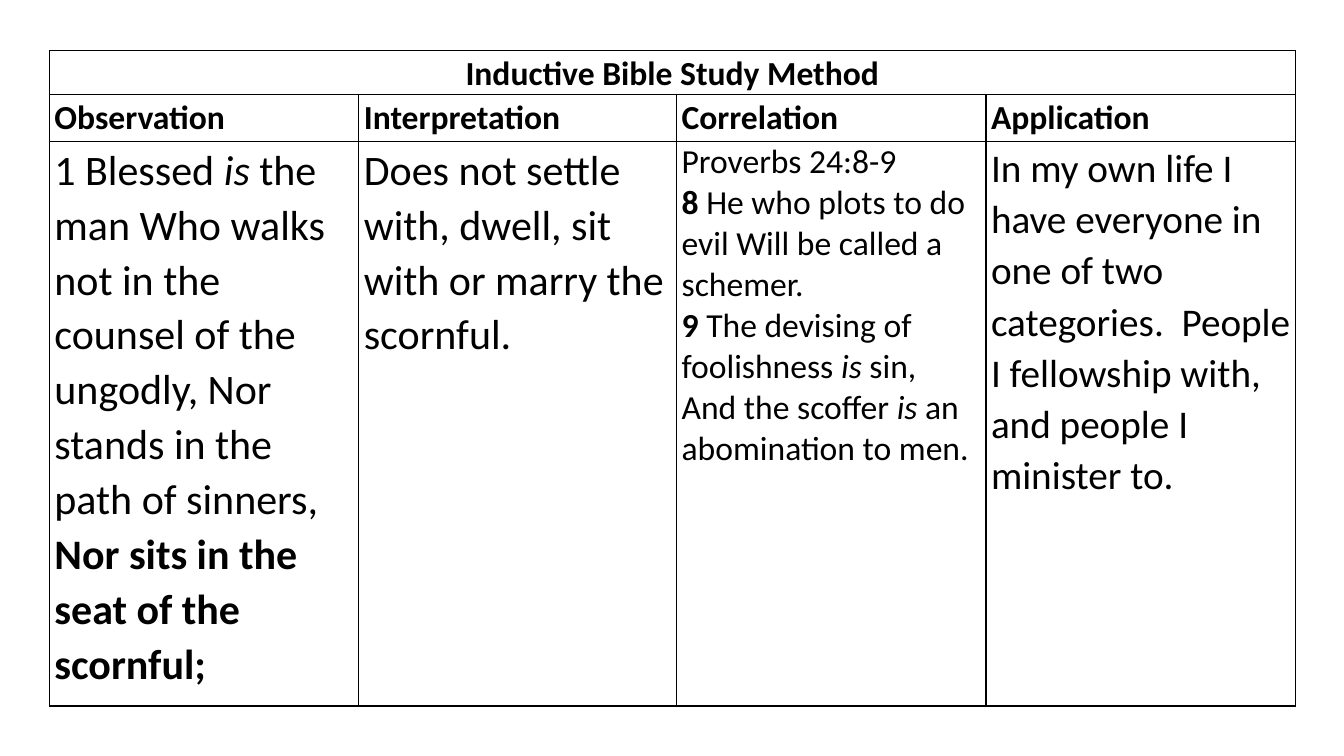
from pptx import Presentation
from pptx import util as u
from pptx.dml import color
from pptx.enum import text
from pptx.oxml import ns
from lxml import etree

COLORS = {"ink": "000000", "paper": "FFFFFF"}
FONT = "Calibri"
BREAK = ("\n", "")  # line break inside a paragraph

TITLE = "Inductive Bible Study Method"
COLUMN_WIDTHS = [221, 227, 221, 221]
ROW_HEIGHTS = [31, 34, 403]

# Each step: heading, text size, line spacing, paragraphs of (text, style)
# Styles: b = bold, i = italic
STEPS = [
    ("Observation", 30, 1.07, [
        [("1 Blessed ", ""), ("is", "i"), (" the man Who walks", "")],
        [("not in the counsel of the", "")],
        [("ungodly, Nor stands in the path of sinners,", ""), BREAK,
         ("Nor sits in the seat of the scornful;", "b")],
    ]),
    ("Interpretation", 30, 1.07, [
        [("Does not settle with, dwell, sit with or marry the scornful.", "")],
    ]),
    ("Correlation", 24, 1.0, [
        [("Proverbs 24:8-9 ", "")],
        [("8 ", "b"), ("He who plots to do evil Will be called a schemer.", ""), BREAK,
         ("9 ", "b"), ("The devising of foolishness ", ""), ("is", "i"), (" sin,", ""), BREAK,
         ("And the scoffer ", ""), ("is", "i"), (" an abomination to men.", "")],
    ]),
    ("Application", 28, 1.07, [
        [("In my own life I have everyone in one of two categories.  "
          "People I fellowship with, and people I minister to.", "")],
    ]),
]


def style_cell(cell):
    """Plain fill, narrow margins and a thin border on all four sides."""
    cell.margin_left = cell.margin_right = u.Pt(3.6)
    cell.margin_top = cell.margin_bottom = 0
    cell.vertical_anchor = text.MSO_ANCHOR.TOP
    cell.fill.solid()
    cell.fill.fore_color.rgb = color.RGBColor.from_string(COLORS["paper"])
    properties = cell._tc.get_or_add_tcPr()
    for position, side in enumerate(("a:lnL", "a:lnR", "a:lnT", "a:lnB")):
        border = etree.Element(ns.qn(side), w=str(u.Pt(1)))
        ink = etree.SubElement(border, ns.qn("a:solidFill"))
        etree.SubElement(ink, ns.qn("a:srgbClr"), val=COLORS["ink"])
        properties.insert(position, border)


def write_cell(cell, paragraphs, size, spacing=1.07, align=text.PP_ALIGN.LEFT):
    for index, pieces in enumerate(paragraphs):
        frame = cell.text_frame
        paragraph = frame.paragraphs[0] if index == 0 else frame.add_paragraph()
        paragraph.alignment = align
        paragraph.line_spacing = spacing
        for piece in pieces:
            if piece == BREAK:
                paragraph.add_line_break()
                continue
            words, style = piece
            run = paragraph.add_run()
            run.text = words
            run.font.name = FONT
            run.font.size = u.Pt(size)
            run.font.bold = "b" in style
            run.font.italic = "i" in style
            run.font.color.rgb = color.RGBColor.from_string(COLORS["ink"])


def add_study_table(slide, left, top, width, height):
    study = slide.shapes.add_table(
        len(ROW_HEIGHTS), len(STEPS),
        u.Pt(left), u.Pt(top), u.Pt(width), u.Pt(height)).table
    study.first_row = study.horz_banding = False

    # Grid, scaled to the box
    for column, share in zip(study.columns, COLUMN_WIDTHS):
        column.width = u.Pt(width * share / sum(COLUMN_WIDTHS))
    for row, share in zip(study.rows, ROW_HEIGHTS):
        row.height = u.Pt(height * share / sum(ROW_HEIGHTS))
    for cell in study.iter_cells():
        style_cell(cell)

    # Title across all columns
    study.cell(0, 0).merge(study.cell(0, len(STEPS) - 1))
    write_cell(study.cell(0, 0), [[(TITLE, "b")]], 24, align=text.PP_ALIGN.CENTER)

    # Headings and study notes
    for column, (heading, size, spacing, notes) in enumerate(STEPS):
        write_cell(study.cell(1, column), [[(heading, "b")]], 24)
        write_cell(study.cell(2, column), notes, size, spacing)


def main():
    deck = Presentation()
    deck.slide_width, deck.slide_height = u.Pt(960), u.Pt(540)
    slide = deck.slides.add_slide(deck.slide_layouts[6])
    add_study_table(slide, 35.3, 36, 890, 468)
    deck.save("out.pptx")


if __name__ == "__main__":
    main()
